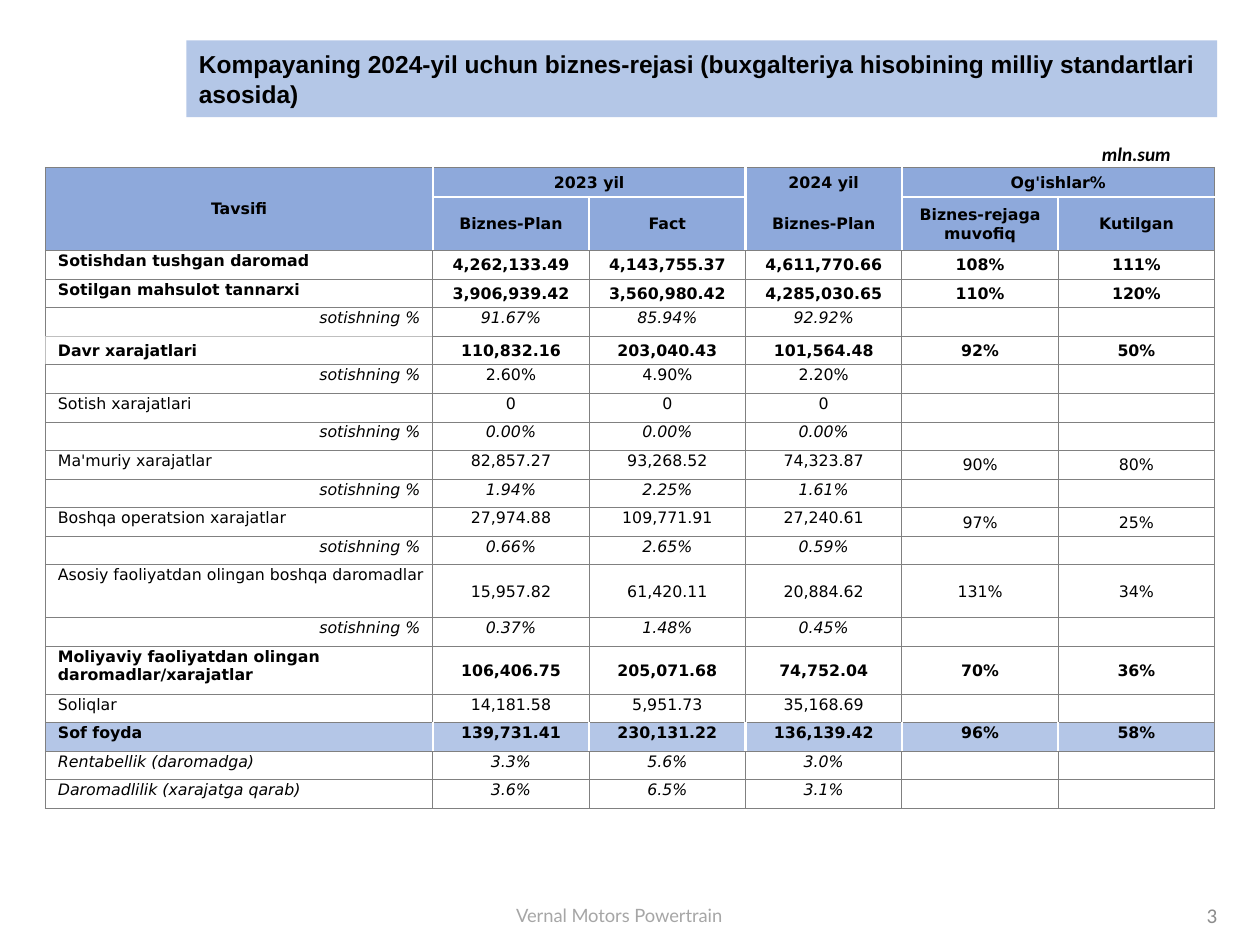
from lxml.etree import SubElement
from pptx import Presentation
from pptx.dml.color import RGBColor
from pptx.enum.shapes import MSO_SHAPE
from pptx.enum.text import MSO_ANCHOR, PP_ALIGN
from pptx.oxml.ns import qn
from pptx.util import Inches, Pt

WIDE, HIGH = Inches(10), Inches(7.5)
HUES = {"title": "B4C7E7", "head": "8EA9DB", "sum": "B4C6E7", "ink": "000000",
        "foot": "A6A6A6", "page": "8C8C8C", "line": "808080", "pale": "BFBFBF", "white": "FFFFFF"}
TOP, MID, LOW = MSO_ANCHOR.TOP, MSO_ANCHOR.MIDDLE, MSO_ANCHOR.BOTTOM
LEFT, CENTER, RIGHT = PP_ALIGN.LEFT, PP_ALIGN.CENTER, PP_ALIGN.RIGHT
SHARE = "sotishning %"
FIRST, TOTAL = 3, 18
COLS, UNIT = 6, 12.41
TALL = {0: 3.17, 1: 3.17, 2: 5.65, 14: 5.6, 16: 5.07}
HEADS = [
    ["", "", "", "", "", "mln.sum"],
    ["Tavsifi", "2023 yil", "", "2024 yil", "Og'ishlar%", ""],
    ["", "Biznes-Plan", "Fact", "Biznes-Plan", "Biznes-rejaga muvofiq", "Kutilgan"],
]
SPANS = [(1, 0, 2, 0), (1, 1, 1, 2), (1, 4, 1, 5)]
ROWS = [
    ("Sotishdan tushgan daromad", "b", MID, "4,262,133.49", "4,143,755.37", "4,611,770.66", "108%", "111%"),
    ("Sotilgan mahsulot tannarxi", "b", MID, "3,906,939.42", "3,560,980.42", "4,285,030.65", "110%", "120%"),
    (SHARE, "i", TOP, "91.67%", "85.94%", "92.92%"),
    ("Davr xarajatlari", "b", MID, "110,832.16", "203,040.43", "101,564.48", "92%", "50%"),
    (SHARE, "", TOP, "2.60%", "4.90%", "2.20%"),
    ("Sotish xarajatlari", "", TOP, "0", "0", "0"),
    (SHARE, "i", TOP, "0.00%", "0.00%", "0.00%"),
    ("Ma'muriy xarajatlar", "", TOP, "82,857.27", "93,268.52", "74,323.87", "90%", "80%"),
    (SHARE, "i", TOP, "1.94%", "2.25%", "1.61%"),
    ("Boshqa operatsion xarajatlar", "", TOP, "27,974.88", "109,771.91", "27,240.61", "97%", "25%"),
    (SHARE, "i", TOP, "0.66%", "2.65%", "0.59%"),
    ("Asosiy faoliyatdan olingan boshqa daromadlar", "", MID, "15,957.82", "61,420.11", "20,884.62", "131%", "34%"),
    (SHARE, "i", TOP, "0.37%", "1.48%", "0.45%"),
    ("Moliyaviy faoliyatdan olingan daromadlar/xarajatlar", "b", MID,
     "106,406.75", "205,071.68", "74,752.04", "70%", "36%"),
    ("Soliqlar", "", TOP, "14,181.58", "5,951.73", "35,168.69"),
    ("Sof foyda", "b", TOP, "139,731.41", "230,131.22", "136,139.42", "96%", "58%"),
    ("Rentabellik (daromadga)", "i", TOP, "3.3%", "5.6%", "3.0%"),
    ("Daromadlilik (xarajatga qarab)", "i", TOP, "3.6%", "6.5%", "3.1%"),
]


def hue(name):
    """Return the named colour."""
    return RGBColor.from_string(HUES[name])


def across(part):
    """Return a percentage of the slide's width."""
    return int(WIDE * part / 100)


def down(part):
    """Return a percentage of the slide's height."""
    return int(HIGH * part / 100)


def place(left, top, width, height):
    """Return a frame given in percent of the slide."""
    return across(left), down(top), across(width), down(height)


def write(frame, words, size, face, ink="ink", style="", align=LEFT):
    """Fill a text frame with one styled paragraph."""
    frame.text = words
    para = frame.paragraphs[0]
    para.alignment = align
    for run in para.runs:
        font = run.font
        font.size, font.name, font.color.rgb = Pt(size), face, hue(ink)
        font.bold, font.italic = "b" in style, "i" in style
    if not words:
        SubElement(para._p, qn("a:endParaRPr"), sz=str(size * 100))


def label(slide, spot, words, size, face, ink, align):
    """Add a line of plain text."""
    frame = slide.shapes.add_textbox(*spot).text_frame
    frame.word_wrap, frame.vertical_anchor = True, MID
    write(frame, words, size, face, ink, align=align)


def banner(slide, spot, words):
    """Add the title bar."""
    bar = slide.shapes.add_shape(MSO_SHAPE.RECTANGLE, *spot)
    bar.shadow.inherit = False
    bar.fill.solid()
    bar.fill.fore_color.rgb = hue("title")
    bar.line.fill.background()
    bar.text_frame.word_wrap, bar.text_frame.vertical_anchor = True, MID
    write(bar.text_frame, words, 14, "Arial", style="b")


def edges(row, col, last):
    """Return the colour of each side of a cell."""
    sides = dict.fromkeys("LRTB", "line")
    if row == 0:
        sides.update(L=None, R=None, T=None)
    if row in (1, 2, TOTAL):
        sides["L"] = "white" if col else "line"
        sides["R"] = "white" if last < COLS - 1 else "line"
    if row in (1, 2) and col:
        sides["B" if row == 1 else "T"] = None if col == 3 else "white"
    if col == 0 and row == 5:
        sides["B"] = "pale"
    if col == 0 and row == 6:
        sides.update(L="pale", T="pale")
    return sides


def border(cell, sides):
    """Draw the four sides of a cell."""
    props = cell._tc.get_or_add_tcPr()
    for side, name in sides.items():
        width = Pt(1.5 if name == "white" else 0.5)
        line = SubElement(props, qn("a:ln" + side), w=str(width))
        if name:
            fill = SubElement(line, qn("a:solidFill"))
            SubElement(fill, qn("a:srgbClr"), val=HUES[name])
        else:
            SubElement(line, qn("a:noFill"))


def shade(cell, row):
    """Fill a cell by the kind of its row."""
    name = {1: "head", 2: "head", TOTAL: "sum"}.get(row)
    if name:
        cell.fill.solid()
        cell.fill.fore_color.rgb = hue(name)
    else:
        cell.fill.background()


def enter(cell, words, style, align=CENTER, anchor=MID, size=9, face="DejaVu Sans"):
    """Set the text and the margins of a cell."""
    write(cell.text_frame, words, size, face, style=style, align=align)
    cell.vertical_anchor = anchor
    cell.margin_left = Inches(0.1 if align == LEFT else 0.01)
    cell.margin_right = Inches(0.1 if align == RIGHT else 0.01)
    cell.margin_top, cell.margin_bottom = Inches(0.01), 0


def record(grid, row, name, style, anchor, *vals):
    """Enter one row of figures."""
    sub = name == SHARE
    side = MID if name == "Davr xarajatlari" else TOP
    enter(grid.cell(row, 0), name, "i" if sub else style, RIGHT if sub else LEFT, side)
    for col in range(1, COLS):
        words = vals[col - 1] if col <= len(vals) else ""
        rate = col > 3 and row != TOTAL
        enter(grid.cell(row, col), words, style, anchor=MID if rate else anchor)


def chart(slide, spot):
    """Add the table of plan and fact."""
    count = FIRST + len(ROWS)
    grid = slide.shapes.add_table(count, COLS, *spot).table
    grid.first_row = grid.horz_banding = False
    for col in range(COLS):
        grid.columns[col].width = across(UNIT) if col else spot[2] - (COLS - 1) * across(UNIT)
    plain = (spot[3] - sum(map(down, TALL.values()))) // (count - len(TALL))
    for row in range(count):
        grid.rows[row].height = down(TALL[row]) if row in TALL else plain
    for top, left, low, right in SPANS:
        grid.cell(top, left).merge(grid.cell(low, right))
    for row, heads in enumerate(HEADS):
        for col, words in enumerate(heads):
            enter(grid.cell(row, col), words, "b")
    enter(grid.cell(0, COLS - 1), HEADS[0][-1], "bi", anchor=LOW, size=11, face="Calibri")
    for row, data in enumerate(ROWS, FIRST):
        record(grid, row, *data)
    for row in range(count):
        for col in range(COLS):
            cell = grid.cell(row, col)
            if not cell.is_spanned:
                wide = cell.span_width if cell.is_merge_origin else 1
                border(cell, edges(row, col, col + wide - 1))
            shade(cell, row)


def main():
    """Build and save the slide."""
    deck = Presentation()
    deck.slide_width, deck.slide_height = WIDE, HIGH
    slide = deck.slides.add_slide(deck.slide_layouts[6])
    label(slide, place(37.9, 94.93, 22.5, 3.73), "Vernal Motors Powertrain", 10.5, "Lato", "foot", CENTER)
    banner(slide, place(14.8, 4.27, 81.8, 8.13),
           "Kompayaning 2024-yil uchun biznes-rejasi (buxgalteriya hisobining milliy standartlari asosida)")
    label(slide, place(75.1, 94.13, 22.5, 5.33), "3", 12, "Calibri", "page", RIGHT)
    chart(slide, place(3.6, 14.53, 92.8, 71.07))
    deck.save("out.pptx")


if __name__ == "__main__":
    main()
